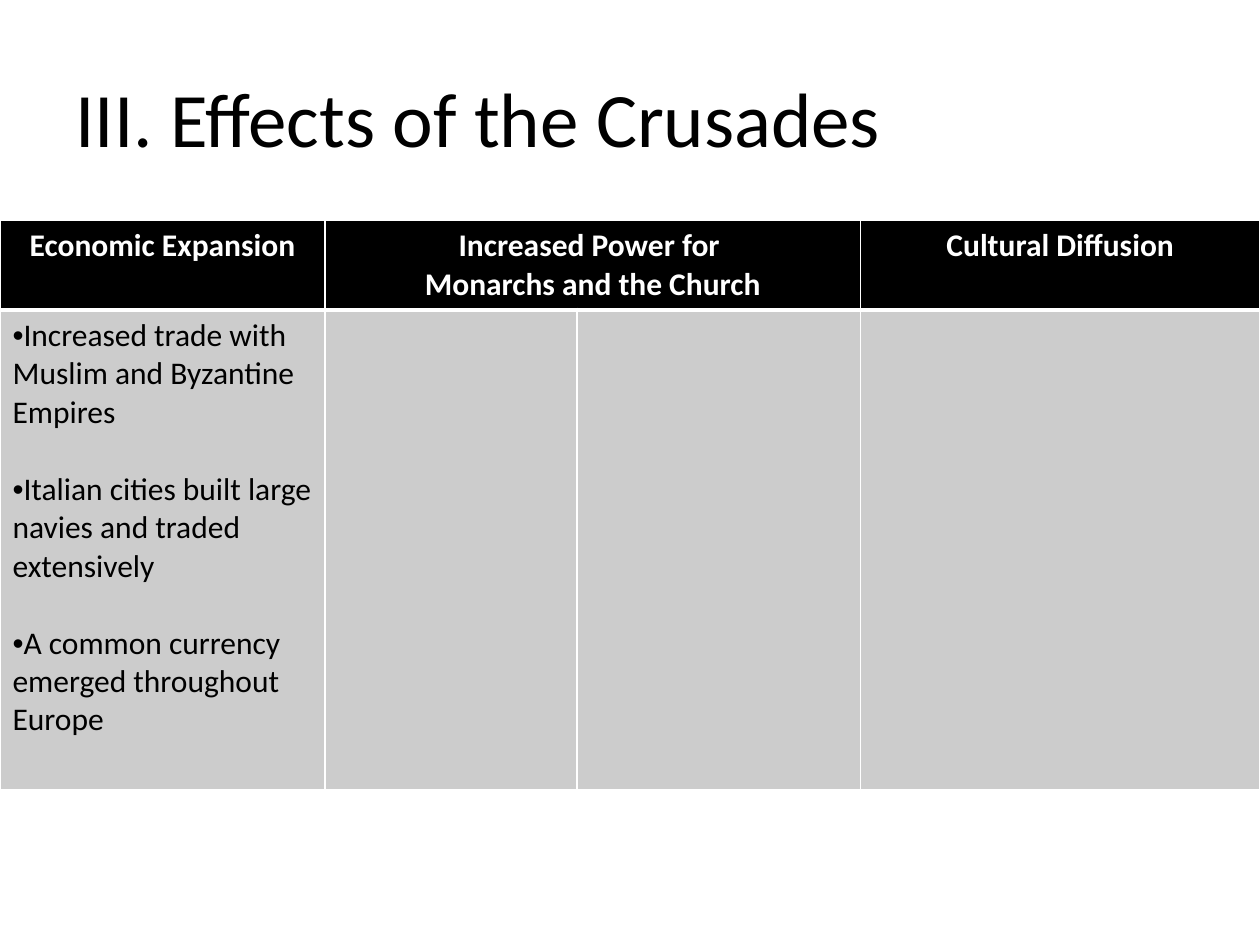
from dataclasses import dataclass

from lxml import etree
from pptx import Presentation
from pptx import util as u
from pptx.dml.color import RGBColor
from pptx.enum import text
from pptx.oxml import ns


@dataclass(frozen=True)
class Theme:
    font: str = "Calibri"
    black: RGBColor = RGBColor(0, 0, 0)
    white: RGBColor = RGBColor(255, 255, 255)
    gray: RGBColor = RGBColor(0xCC, 0xCC, 0xCC)
    title: u.Pt = u.Pt(44)
    body: u.Pt = u.Pt(18)


look = Theme()


def style(para, size, color, bold=False):
    para.font.name = look.font
    for run in para.runs:
        run.font.name = look.font
        run.font.size = size
        run.font.bold = bold
        run.font.color.rgb = color


def edge(cell, widths):
    """Draw white cell borders; widths are points for left, right, top, bottom."""
    props = cell._tc.get_or_add_tcPr()
    for i, (side, width) in enumerate(zip("LRTB", widths)):
        line = etree.Element(ns.qn(f"a:ln{side}"), w=str(u.Pt(width)))
        fill = etree.SubElement(line, ns.qn("a:solidFill"))
        etree.SubElement(fill, ns.qn("a:srgbClr"), val=str(look.white))
        props.insert(i, line)


deck = Presentation()
deck.slide_width, deck.slide_height = u.Inches(10), u.Inches(7.5)
slide = deck.slides.add_slide(deck.slide_layouts[5])

title = slide.shapes.title
title.left, title.top = u.Inches(0.5), u.Inches(0.3)
title.width, title.height = u.Inches(9), u.Inches(1.25)
title.text_frame.text = "III. Effects of the Crusades"
title.text_frame.vertical_anchor = text.MSO_ANCHOR.MIDDLE
head = title.text_frame.paragraphs[0]
head.alignment = text.PP_ALIGN.LEFT
style(head, look.title, look.black)

# Effects table: one header row over one body row
widths = [2.58, 2, 2.25, 3.17]
heights = [0.7, 3.81]
table = slide.shapes.add_table(
    2, len(widths), u.Inches(0), u.Inches(1.75),
    u.Inches(sum(widths)), u.Inches(sum(heights))).table
for col, width in zip(table.columns, widths):
    col.width = u.Inches(width)
for row, height in zip(table.rows, heights):
    row.height = u.Inches(height)
for col in range(len(widths)):
    for row, fill, lines in ((0, look.black, (1, 1, 1, 3)),
                             (1, look.gray, (1, 1, 3, 1))):
        cell = table.cell(row, col)
        cell.fill.solid()
        cell.fill.fore_color.rgb = fill
        edge(cell, lines)
table.cell(0, 1).merge(table.cell(0, 2))

heads = {
    0: "Economic Expansion",
    1: "Increased Power for \nMonarchs and the Church",
    3: "Cultural Diffusion",
}
for col, words in heads.items():
    frame = table.cell(0, col).text_frame
    frame.text = words
    for para in frame.paragraphs:
        para.alignment = text.PP_ALIGN.CENTER
        style(para, look.body, look.white, bold=True)

points = [
    "Increased trade with Muslim and Byzantine Empires",
    "Italian cities built large navies and traded extensively",
    "A common currency emerged throughout Europe",
]
frame = table.cell(1, 0).text_frame
frame.text = "\n".join(points)
for i, para in enumerate(frame.paragraphs):
    if i:
        para.space_before = u.Pt(22)
    props = para._p.get_or_add_pPr()
    props.set("marL", "0")
    props.set("indent", "0")
    etree.SubElement(props, ns.qn("a:buFont"), typeface="Arial")
    etree.SubElement(props, ns.qn("a:buChar"), char="•")
    style(para, look.body, look.black)

deck.save("out.pptx")
